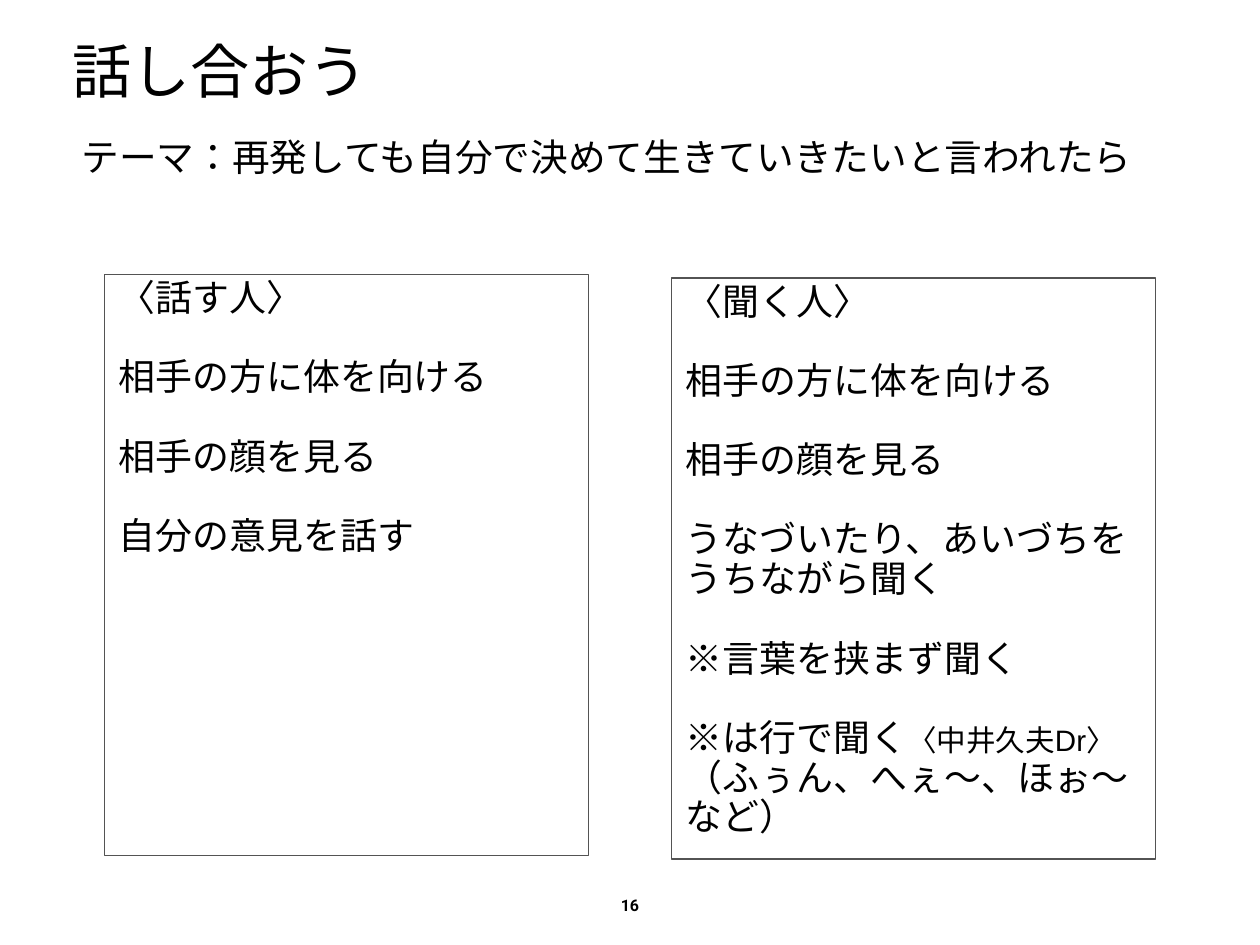
from dataclasses import dataclass

from lxml.etree import SubElement
from pptx import Presentation
from pptx.dml.color import RGBColor
from pptx.enum.lang import MSO_LANGUAGE_ID as Lang
from pptx.enum.text import MSO_ANCHOR as Anchor, MSO_AUTO_SIZE as AutoSize, PP_ALIGN as Align
from pptx.oxml.ns import qn
from pptx.util import Inches, Pt


@dataclass(frozen=True)
class Theme:
    ink: RGBColor = RGBColor(0, 0, 0)
    frame: RGBColor = RGBColor(0x53, 0x53, 0x53)
    font: str = "Arial"
    number_font: str = "Roboto"
    title: float = 48
    topic: float = 30.6
    body: float = 30
    note: float = 24
    number: float = 13
    gap: float = 32
    inset: float = 0.06
    indent: float = 0.1


THEME = Theme()
WIDTH, HEIGHT = 14.22, 10.67
MARGIN = 0.76
PANEL_LEFT, PANEL_STEP = 1.18, 6.4
PANEL_WIDTH, PANEL_HEIGHT = 5.46, 6.56

SHARED_RULES = ["相手の方に体を向ける", "相手の顔を見る"]
SPEAKER = ["〈話す人〉", *SHARED_RULES, "自分の意見を話す"]
LISTENER = [
    "〈聞く人〉",
    *SHARED_RULES,
    "うなづいたり、あいづちをうちながら聞く",
    "※言葉を挟まず聞く",
    [("※は行で聞く", THEME.body), ("〈中井久夫Dr〉", THEME.note),
     ("（ふぅん、へぇ～、ほぉ～など）", THEME.body)],
]


def prepare_frame(shape, box, anchor=Anchor.TOP):
    shape.left, shape.top, shape.width, shape.height = map(Inches, box)
    frame = shape.text_frame
    frame.word_wrap = True
    frame.auto_size = AutoSize.NONE
    frame.vertical_anchor = anchor
    frame.margin_left = frame.margin_right = Inches(THEME.inset)
    frame.margin_top = frame.margin_bottom = Inches(THEME.inset)
    return frame


def add_span(para, text, size, font=THEME.font, bold=False):
    span = para.add_run()
    span.text = text
    span.font.size = Pt(size)
    span.font.bold = bold
    span.font.name = font
    span.font.color.rgb = THEME.ink
    span.font.language_id = Lang.JAPANESE
    SubElement(span.font._element, qn("a:ea"), typeface=font)


def format_list_para(para, spacing):
    para.line_spacing = spacing
    para.space_before = Pt(THEME.gap)
    para.space_after = Pt(0)
    para.alignment = Align.LEFT
    props = para._p.get_or_add_pPr()
    props.set("marL", str(Inches(THEME.indent)))
    props.set("indent", "0")
    SubElement(props, qn("a:buNone"))


def place_title(shape, box, text):
    para = prepare_frame(shape, box).paragraphs[0]
    para.alignment = Align.LEFT
    para.line_spacing = 0.8
    add_span(para, text, THEME.title)


def place_topic(shape, box, text):
    para = prepare_frame(shape, box).paragraphs[0]
    format_list_para(para, 0.8)
    add_span(para, text, THEME.topic)


def place_panel(shape, box, lines):
    frame = prepare_frame(shape, box)
    shape.line.color.rgb = THEME.frame
    shape.line.width = Pt(1)
    for index, line in enumerate(lines):
        para = frame.add_paragraph() if index else frame.paragraphs[0]
        format_list_para(para, 0.9)
        spans = [(line, THEME.body)] if isinstance(line, str) else line
        for text, size in spans:
            add_span(para, text, size)


def place_page_number(page, box, text):
    label = page.shapes.add_textbox(*map(Inches, box))
    frame = prepare_frame(label, box, Anchor.BOTTOM)
    frame.word_wrap = False
    para = frame.paragraphs[0]
    para.alignment = Align.CENTER
    add_span(para, text, THEME.number, THEME.number_font, bold=True)


def build_discussion_page(deck):
    page = deck.slides.add_slide(deck.slide_layouts.get_by_name("Comparison"))
    slots = {slot.placeholder_format.idx: slot for slot in page.placeholders}
    content_width = WIDTH - 2 * MARGIN
    place_title(slots[0], (MARGIN, 0.48, content_width, 1.06), "話し合おう")
    place_topic(slots[1], (MARGIN, 1.55, content_width, 0.73),
                "テーマ：再発しても自分で決めて生きていきたいと言われたら")
    panels = [(slots[2], 3.1, SPEAKER), (slots[4], 3.14, LISTENER)]
    for column, (slot, top, lines) in enumerate(panels):
        left = PANEL_LEFT + column * PANEL_STEP
        place_panel(slot, (left, top, PANEL_WIDTH, PANEL_HEIGHT), lines)
    unused = slots[3]._element
    unused.getparent().remove(unused)
    number_width = 0.33
    place_page_number(page, ((WIDTH - number_width) / 2, 10.08, number_width, 0.31), "16")


def main():
    deck = Presentation()
    deck.slide_width, deck.slide_height = Inches(WIDTH), Inches(HEIGHT)
    build_discussion_page(deck)
    deck.save("out.pptx")


if __name__ == "__main__":
    main()
